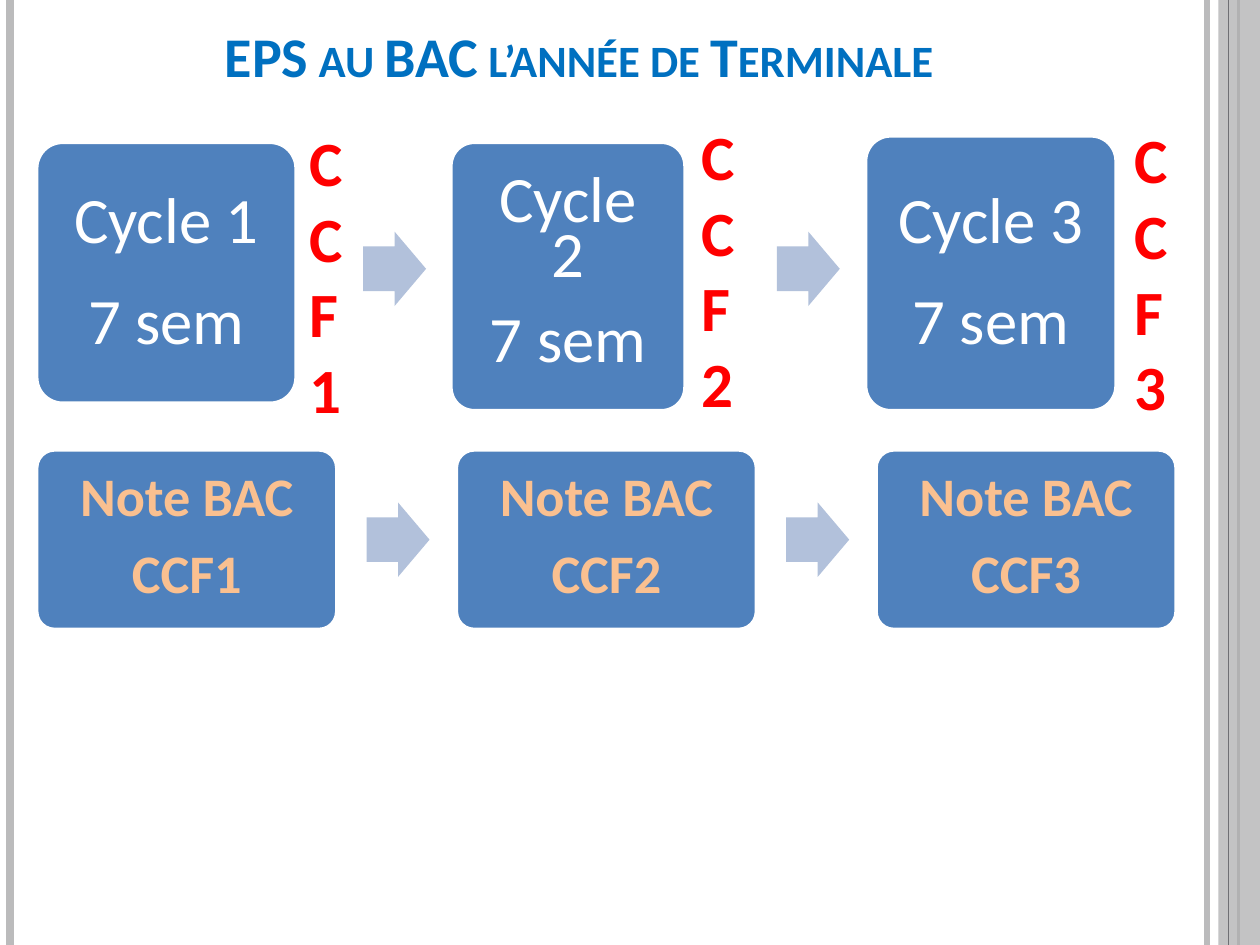
from lxml import etree
from pptx import Presentation
from pptx import util as u
from pptx.dml.color import RGBColor
from pptx.enum import shapes, text
from pptx.oxml.ns import qn

COLOURS = {
    "title": "0070C0", "box": "4F81BD", "arrow": "B2C1DB", "white": "FFFFFF",
    "exam": "FF0000", "grade": "FAC090", "rail": "BBBBBC", "dark_rail": "6F6F74",
}
FONT = "Calibri"
ARROW_WIDTH, ARROW_HEIGHT = 1.27, 1.5


def colour(name):
    return RGBColor.from_string(COLOURS[name])


def write(shape, lines, size, ink, bold=False, spacing=None, gap=0, inset=(0.25, 0.13),
          anchor=text.MSO_ANCHOR.MIDDLE):
    """Fill a shape with centred paragraphs; gap is the space before each later one."""
    frame = shape.text_frame
    frame.word_wrap = True
    frame.vertical_anchor = anchor
    frame.margin_left = frame.margin_right = u.Cm(inset[0])
    frame.margin_top = frame.margin_bottom = u.Cm(inset[1])
    for index, line in enumerate(lines):
        paragraph = frame.add_paragraph() if index else frame.paragraphs[0]
        paragraph.text = line
        paragraph.alignment = text.PP_ALIGN.CENTER
        paragraph.line_spacing = spacing
        paragraph.space_before = u.Pt(gap if index else 0)
        font = paragraph.font
        font.name, font.size, font.bold = FONT, u.Pt(size), bold
        font.color.rgb = colour(ink)


def add_preset(slide, kind, box, fill, adjustments=(), outlined=False):
    shape = slide.shapes.add_shape(kind, *map(u.Cm, box))
    shape.shadow.inherit = False
    shape.fill.solid()
    shape.fill.fore_color.rgb = colour(fill)
    if outlined:
        shape.line.color.rgb = colour("white")
        shape.line.width = u.Pt(2)
    else:
        shape.line.fill.background()
    for index, value in enumerate(adjustments):
        shape.adjustments[index] = value
    return shape


def add_card(slide, box):
    return add_preset(slide, shapes.MSO_SHAPE.ROUNDED_RECTANGLE, box, "box", [0.1], True)


def add_arrow(slide, left, top):
    box = (left, top, ARROW_WIDTH, ARROW_HEIGHT)
    add_preset(slide, shapes.MSO_SHAPE.RIGHT_ARROW, box, "arrow", [0.6, 0.5])


def add_rail(slide, x, height, ink, width):
    line = slide.shapes.add_connector(
        shapes.MSO_CONNECTOR.STRAIGHT, u.Cm(x), 0, u.Cm(x), u.Cm(height))
    line.line.color.rgb = colour(ink)
    line.line.width = u.Pt(width)
    etree.SubElement(line._element.spPr, qn("a:effectLst"))


def add_frame(slide, width, height):
    """Draw the vertical rails and the translucent band at the slide edges."""
    add_rail(slide, width - 1.07, height, "rail", 3)
    add_rail(slide, 0.2, height, "rail", 4.5)
    add_rail(slide, width - 0.43, height, "dark_rail", 1.5)
    band = add_preset(slide, shapes.MSO_SHAPE.RECTANGLE,
                      (width - 0.84, 0, 0.84, height), "rail")
    tint = band._element.spPr.find(qn("a:solidFill"))[0]
    etree.SubElement(tint, qn("a:alpha")).set("val", "87000")
    add_rail(slide, width - 0.64, height, "dark_rail", 0.75)


def add_title(slide, box):
    title = slide.shapes.add_textbox(*map(u.Cm, box))
    write(title, ["EPS au BAC l’année de Terminale"], 32, "title", True, 0.9,
          anchor=text.MSO_ANCHOR.BOTTOM)
    title.text_frame.paragraphs[0].runs[0]._r.get_or_add_rPr().set("cap", "small")


def add_cycles(slide, left, top):
    """Draw the teaching cycles, each followed by its upright exam label."""
    # card x, y, width, height; line spacing; label x, y
    cycles = [
        (0, 0.13, 5.23, 5.26, 0.9, 5.25, -0.38),
        (8.35, 0.13, 4.72, 5.41, 0.7, 13.15, -0.5),
        (16.71, 0, 5.05, 5.54, 0.9, 21.89, -0.43),
    ]
    for number, (x, y, width, height, spacing, label_x, label_y) in enumerate(cycles, 1):
        card = add_card(slide, (left + x, top + y, width, height))
        write(card, [f"Cycle {number}", "7 sem"], 37, "white", spacing=spacing,
              gap=18, inset=(0.46, 0.46))
        label = slide.shapes.add_textbox(
            *map(u.Cm, (left + label_x, top + label_y, 1.07, 6.35)))
        write(label, [f"CCF{number}"], 36, "exam", True, anchor=text.MSO_ANCHOR.TOP)
    for index in range(2):
        add_arrow(slide, left + 6.58 + index * 8.34, top + 1.93)


def add_grades(slide, left, top, width, height, count=3):
    """Draw equal grade cards joined by arrows across the given box."""
    card_width = 6.05
    step = (width - card_width) / (count - 1)
    for index in range(count):
        x = left + index * step
        card = add_card(slide, (x, top, card_width, height))
        write(card, ["Note BAC", f"CCF{index + 1}"], 31, "grade", True, 0.8,
              gap=14, inset=(0.35, 0.35))
        if index < count - 1:
            add_arrow(slide, x + card_width + 0.6, top + (height - ARROW_HEIGHT) / 2)


def main():
    width, height = 25.4, 19.05
    presentation = Presentation()
    presentation.slide_width, presentation.slide_height = u.Cm(width), u.Cm(height)
    slide = presentation.slides.add_slide(presentation.slide_layouts[6])
    add_frame(slide, width, height)
    add_title(slide, (1.3, 0.33, 20.75, 1.6))
    add_cycles(slide, 0.74, 2.74)
    add_grades(slide, 0.74, 9.07, 22.97, 3.62)
    presentation.save("out.pptx")


if __name__ == "__main__":
    main()
